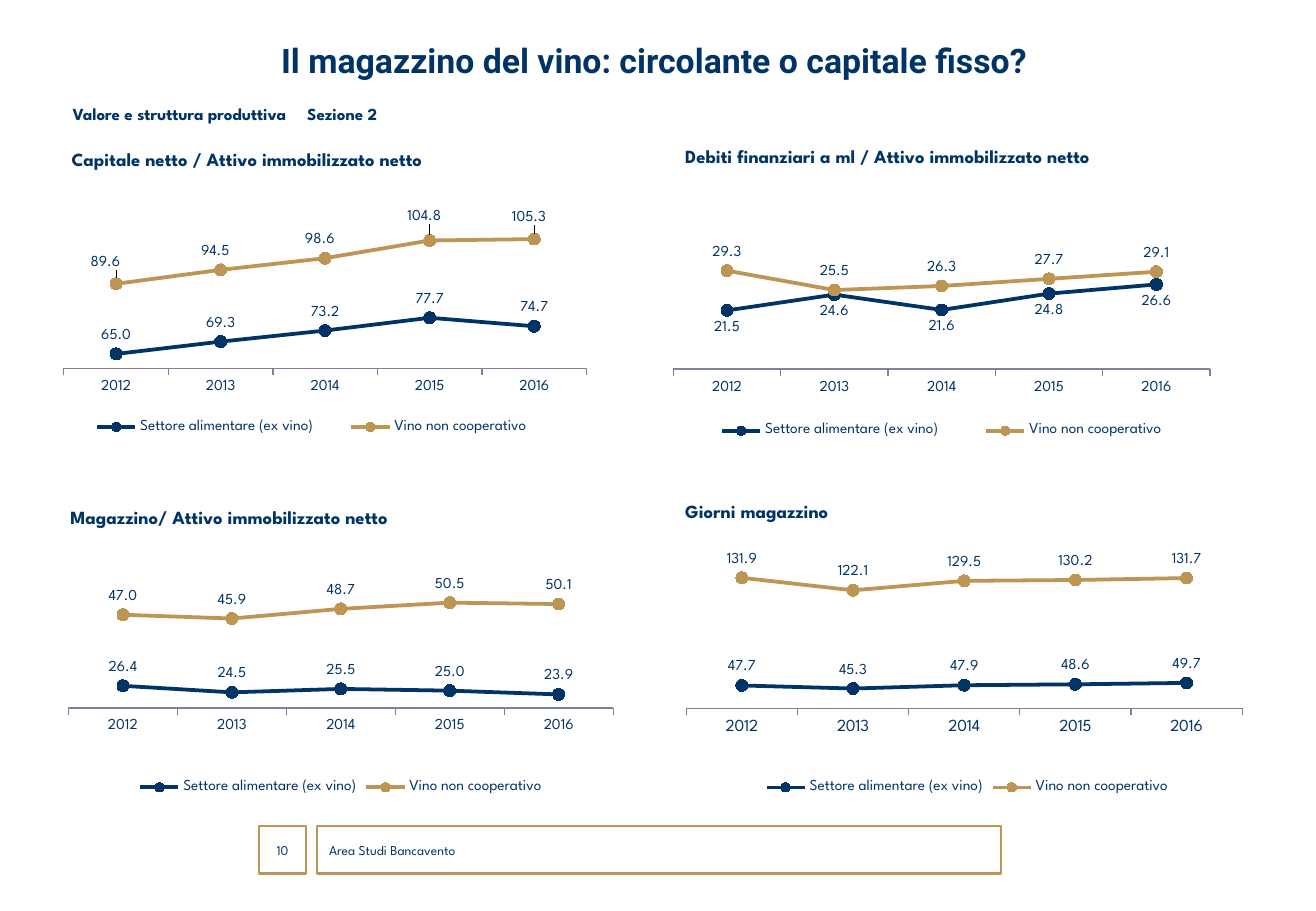
from lxml import etree
from pptx import Presentation
from pptx.chart.data import CategoryChartData
from pptx.dml.color import RGBColor
from pptx.enum import chart as c, shapes, text
from pptx.oxml import parse_xml
from pptx.oxml.ns import nsdecls, qn
from pptx.util import Inches, Pt

COLORS = {"navy": "003366", "gold": "BD9554", "axis": "808099"}
FONT = "League Spartan"
YEARS = ["2012", "2013", "2014", "2015", "2016"]
SERIES = [("Settore alimentare (ex vino)", "navy"), ("Vino non cooperativo", "gold")]
MIDDLE, CENTER = text.MSO_ANCHOR.MIDDLE, text.PP_ALIGN.CENTER

TEXTS = [  # box, text, size, format
    ((0.9, 0.23, 8.97, 0.52), "Il magazzino del vino: circolante o capitale fisso?", 20,
     dict(font="Roboto", bold=True, align=CENTER, anchor=MIDDLE)),
    ((0.5, 0.78, 9.84, 0.31), "Valore e struttura produttiva\tSezione 2", 10,
     dict(bold=True, anchor=MIDDLE, tab=1.93)),
    ((0.49, 1.17, 4.72, 0.38), "Capitale netto / Attivo immobilizzato netto", 11, dict(bold=True)),
    ((5.54, 1.14, 4.72, 0.38), "Debiti finanziari a ml / Attivo immobilizzato netto", 11,
     dict(bold=True)),
    ((0.48, 4.12, 4.72, 0.38), "Magazzino/ Attivo immobilizzato netto", 11, dict(bold=True)),
    ((5.54, 4.07, 4.72, 0.38), "Giorni magazzino", 11, dict(bold=True)),
    ((2.13, 6.8, 0.39, 0.39), "10", 8, dict(framed=True, align=CENTER, anchor=MIDDLE)),
    ((2.61, 6.8, 5.63, 0.39), "Area Studi Bancavento", 8, dict(framed=True, anchor=MIDDLE)),
]

CHARTS = [
    dict(box=(0.52, 1.58, 4.44, 2.2), scale=(60, 120), plot=(0, 0.02, 0.97, 0.64),
         legend=(0, 0.83, 0.92, 0.1),
         values=[(65.0, 69.3, 73.2, 77.7, 74.7), (89.6, 94.5, 98.6, 104.8, 105.3)],
         shifts=[(-0.02, -0.01), (-0.01, 0), (-0.01, 0), (-0.01, -0.02), (-0.01, -0.01)]),
    dict(box=(5.4, 1.74, 4.7, 2.03), scale=(10, 40), plot=(0.03, 0.02, 0.94, 0.62),
         legend=(0.04, 0.84, 0.92, 0.1), navy_below=True,
         values=[(21.5, 24.6, 21.6, 24.8, 26.6), (29.3, 25.5, 26.3, 27.7, 29.1)]),
    dict(box=(0.47, 4.55, 4.67, 2.03), scale=(20, 60), plot=(0.02, 0.07, 0.96, 0.56),
         values=[(26.4, 24.5, 25.5, 25.0, 23.9), (47.0, 45.9, 48.7, 50.5, 50.1)]),
    dict(box=(5.5, 4.44, 4.92, 2.14), scale=(30, 160), plot=(0.03, 0.01, 0.93, 0.64),
         year_size=10,
         values=[(47.7, 45.3, 47.9, 48.6, 49.7), (131.9, 122.1, 129.5, 130.2, 131.7)]),
]


def rgb(name):
    return RGBColor.from_string(COLORS[name])


def set_font(font, size, name=FONT, bold=False):
    for key, value in dict(size=Pt(size), name=name, bold=bold).items():
        setattr(font, key, value)
    font.color.rgb = rgb("navy")


def add_text(s, box, words, size, fmt):
    box = [Inches(v) for v in box]
    if fmt.get("framed"):
        sp = s.shapes.add_shape(shapes.MSO_SHAPE.RECTANGLE, *box)
        sp.shadow.inherit = False
        sp.fill.background()
        sp.line.color.rgb = rgb("gold")
        sp.line.width = Pt(1.5)
    else:
        sp = s.shapes.add_textbox(*box)
    tf = sp.text_frame
    tf.word_wrap = True
    tf.vertical_anchor = fmt.get("anchor", text.MSO_ANCHOR.TOP)
    p = tf.paragraphs[0]
    p.alignment = fmt.get("align", text.PP_ALIGN.LEFT)
    if "tab" in fmt:
        tabs = etree.SubElement(p._p.get_or_add_pPr(), qn("a:tabLst"))
        etree.SubElement(tabs, qn("a:tab"), pos=str(Inches(fmt["tab"])), algn="l")
    r = p.add_run()
    r.text = words
    set_font(r.font, size, fmt.get("font", FONT), fmt.get("bold", False))


def layout_xml(values, keys, modes=(), inner=False):
    """Manual chart layout, in fractions of the chart area."""
    parts = ['<c:layoutTarget val="inner"/>'] if inner else []
    parts += [f'<c:{k}Mode val="edge"/>' for k in modes]
    parts += [f'<c:{k} val="{v}"/>' for k, v in zip(keys, values)]
    return parse_xml(f'<c:layout {nsdecls("c")}><c:manualLayout>{"".join(parts)}'
                     '</c:manualLayout></c:layout>')


def set_layout(element, values, before, inner=False):
    for old in element.findall(qn("c:layout")):
        element.remove(old)
    element.find(qn(before)).addprevious(layout_xml(values, "xywh", "xy", inner))


def shift_label(label, dx, dy):
    label.position = c.XL_LABEL_POSITION.ABOVE
    dLbl = label._dLbl
    dLbl.find(qn("c:idx")).addnext(layout_xml((dx, dy), "xy"))


def add_line_chart(s, box, scale, plot, values, legend=None, navy_below=False,
                   year_size=9, shifts=()):
    data = CategoryChartData(number_format="#,##0.0")
    data.categories = YEARS
    for (name, _), vals in zip(SERIES, values):
        data.add_series(name, vals)
    ch = s.shapes.add_chart(c.XL_CHART_TYPE.LINE_MARKERS,
                            *[Inches(v) for v in box], data).chart
    set_font(ch.font, 10)
    ch.has_title = False
    ch.has_legend = True
    ch.legend.position = c.XL_LEGEND_POSITION.BOTTOM
    ch.legend.include_in_layout = False
    set_font(ch.legend.font, 9)
    if legend:
        set_layout(ch.legend._element, legend, "c:overlay")
    set_layout(ch._chartSpace.chart.plotArea, plot, "c:lineChart", inner=True)

    years, amounts = ch.category_axis, ch.value_axis
    set_font(years.tick_labels.font, year_size)
    years.major_tick_mark = c.XL_TICK_MARK.OUTSIDE
    years.format.line.color.rgb = rgb("axis")
    years.format.line.width = Pt(0.75)
    amounts.minimum_scale, amounts.maximum_scale = scale
    amounts.has_major_gridlines = False
    amounts.visible = False

    ch.plots[0].vary_by_categories = False
    for ser, (_, color) in zip(ch.plots[0].series, SERIES):
        ser.smooth = False
        ser.format.line.color.rgb = rgb(color)
        ser.format.line.width = Pt(2.25)
        ser.marker.style = c.XL_MARKER_STYLE.CIRCLE
        ser.marker.size = 7
        ser.marker.format.fill.solid()
        ser.marker.format.fill.fore_color.rgb = rgb(color)
        ser.marker.format.line.color.rgb = rgb(color)
        labels = ser.data_labels
        labels.show_value = True
        labels.number_format = "#,##0.0"
        labels.number_format_is_linked = False
        below = navy_below and color == "navy"
        labels.position = c.XL_LABEL_POSITION.BELOW if below else c.XL_LABEL_POSITION.ABOVE
        set_font(labels.font, 9)
        if color == "gold":
            for i, shift in enumerate(shifts):
                label = ser.points[i].data_label
                set_font(label.font, 9)
                shift_label(label, *shift)


def main():
    prs = Presentation()
    prs.slide_width, prs.slide_height = Inches(10.83), Inches(7.5)
    s = prs.slides.add_slide(prs.slide_layouts[6])
    for item in TEXTS:
        add_text(s, *item)
    for chart in CHARTS:
        add_line_chart(s, **chart)
    prs.save("out.pptx")


if __name__ == "__main__":
    main()
